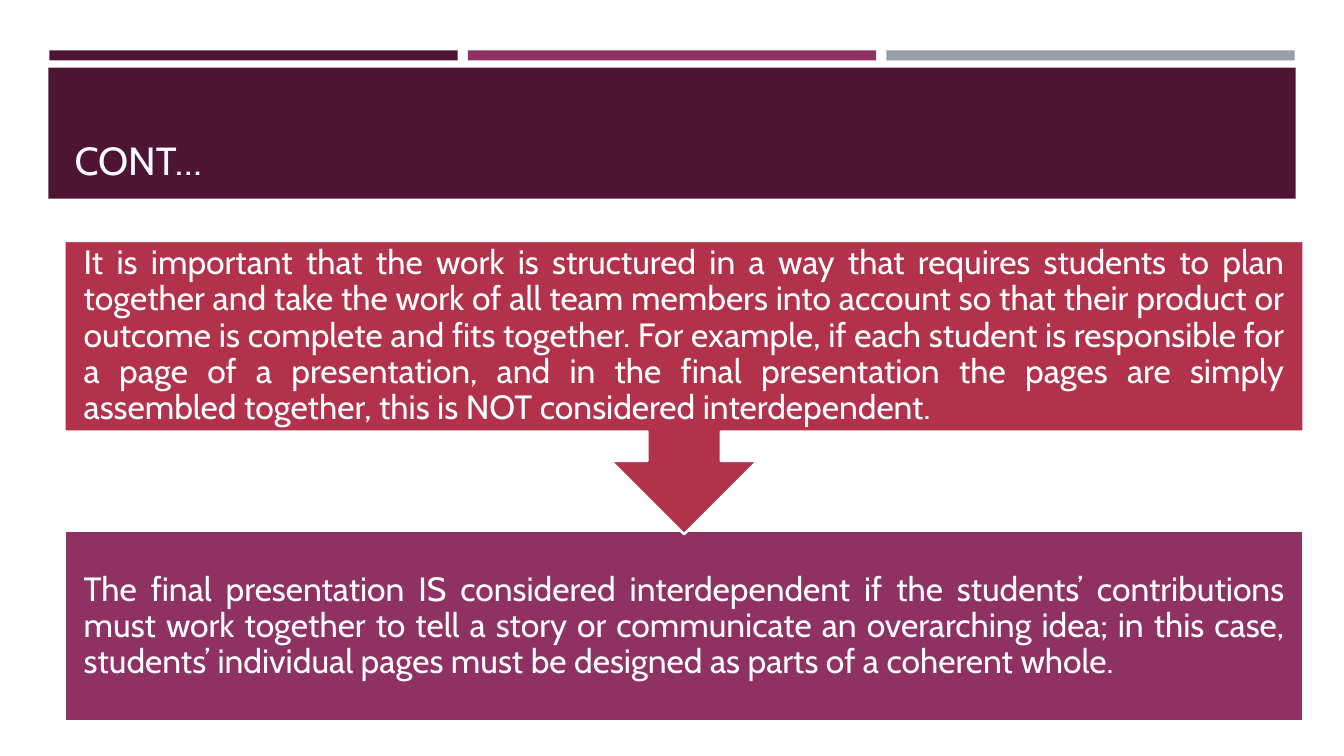
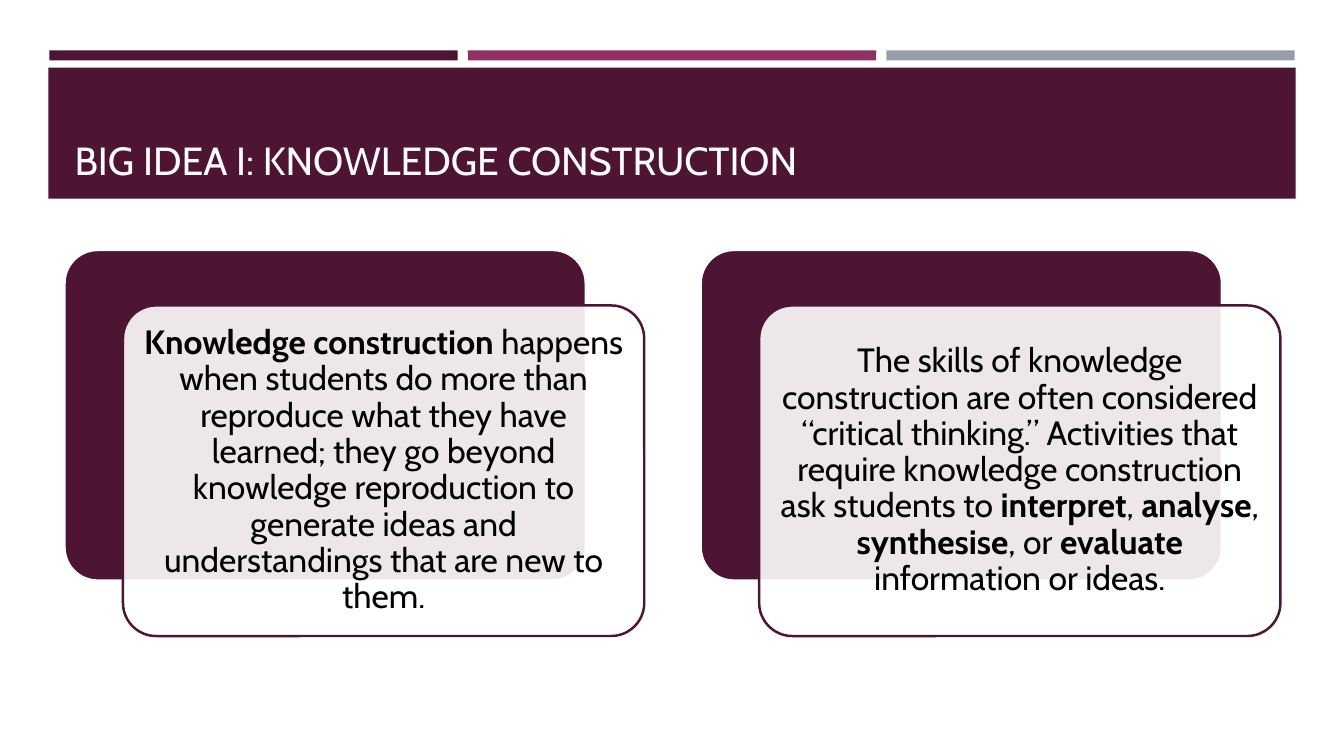
import dataclasses

import lxml.etree
import pptx
import pptx.dml.color
import pptx.enum.shapes
import pptx.enum.text
import pptx.oxml.ns
import pptx.util


@dataclasses.dataclass(frozen=True)
class Theme:
    font: str = "Cabin"
    plum: str = "4D1434"
    violet: str = "903163"
    grey: str = "969FA7"
    red: str = "B2324B"
    white: str = "FFFFFF"
    title: str = "FFFEFF"
    black: str = "000000"
    title_size: int = 28
    body_size: int = 24
    outline: float = 1.75
    line_spacing: float = 0.9


THEME = Theme()
PX = 9144
SHAPE = pptx.enum.shapes.MSO_SHAPE
ALIGN = pptx.enum.text.PP_ALIGN
ANCHOR = pptx.enum.text.MSO_ANCHOR
NO_FIT = pptx.enum.text.MSO_AUTO_SIZE.NONE
RGB = pptx.dml.color.RGBColor.from_string


def draw(page, kind, box, fill, line=None):
    shape = page.shapes.add_shape(kind, *[length * PX for length in box])
    shape.shadow.inherit = False
    shape.fill.solid()
    shape.fill.fore_color.rgb = RGB(fill)
    if line:
        shape.line.color.rgb = RGB(line)
        shape.line.width = pptx.util.Pt(THEME.outline)
    else:
        shape.line.fill.background()
    return shape


def write(shape, spans, align, color, size, frame_format):
    frame = shape.text_frame
    for name, value in frame_format.items():
        setattr(frame, name, value)
    para = frame.paragraphs[0]
    para.alignment = align
    para.line_spacing = THEME.line_spacing
    for text, bold in spans:
        span = para.add_run()
        span.text = text
        for name, value in {"name": THEME.font, "size": pptx.util.Pt(size), "bold": bold}.items():
            setattr(span.font, name, value)
        span.font.color.rgb = RGB(color)


deck = pptx.Presentation()
deck.slide_width = 1333 * PX
deck.slide_height = 750 * PX
layout = deck.slide_layouts[5]
title_holder, *spare_holders = layout.placeholders
for holder in spare_holders:
    holder.element.getparent().remove(holder.element)
for name, length in {"left": 64, "top": 77, "width": 1206, "height": 111}.items():
    setattr(title_holder, name, length * PX)
title_format = {"vertical_anchor": ANCHOR.BOTTOM, "word_wrap": True, "auto_size": NO_FIT}

titles = ["CONT…", "BIG IDEA I: KNOWLEDGE CONSTRUCTION"]
pages = [deck.slides.add_slide(layout) for title in titles]
for page, title in zip(pages, titles):
    write(page.shapes.title, [(title, False)], ALIGN.LEFT, THEME.title, THEME.title_size, title_format)
flow_page, cards_page = pages

bands = [((49 + 415 * column, 50, 405, 10), color)
         for column, color in enumerate([THEME.plum, THEME.violet, THEME.grey])]
bands.append(((48, 67, 1237, 130), THEME.plum))
for index, (box, color) in enumerate(bands):
    band = draw(flow_page, SHAPE.RECTANGLE, box, color).element
    band.nvSpPr.cNvPr.set("id", str(100 + index))
    layout.shapes.element.insert(2 + index, band)

body_format = {"vertical_anchor": ANCHOR.MIDDLE, "word_wrap": True, "auto_size": NO_FIT}
sides = ["margin_left", "margin_top", "margin_right", "margin_bottom"]
flow_format = body_format | dict.fromkeys(sides, 19 * PX)
card_format = body_format | dict.fromkeys(sides, 10 * PX)

result = draw(flow_page, SHAPE.RECTANGLE, (64, 527, 1229, 189), THEME.violet, THEME.white)
callout = draw(flow_page, SHAPE.UP_ARROW_CALLOUT, (64, 239, 1229, 291), THEME.red, THEME.white)
callout.rotation = 180
premise = flow_page.shapes.add_textbox(64 * PX, 239 * PX, 1229 * PX, 189 * PX)
for shape, text in [
    (premise, "It is important that the work is structured in a way that requires students to plan "
              "together and take the work of all team members into account so that their product or "
              "outcome is complete and fits together. For example, if each student is responsible "
              "for a page of a presentation, and in the final presentation the pages are simply "
              "assembled together, this is NOT considered interdependent."),
    (result, "The final presentation IS considered interdependent if the students’ contributions "
             "must work together to tell a story or communicate an overarching idea; in this case, "
             "students’ individual pages must be designed as parts of a coherent whole."),
]:
    write(shape, [(text, False)], ALIGN.JUSTIFY, THEME.white, THEME.body_size, flow_format)

cards = [
    [("Knowledge construction ", True),
     ("happens when students do more than reproduce what they have learned; they go beyond "
      "knowledge reproduction to generate ideas and understandings that are new to them.", False)],
    [("The skills of knowledge construction are often considered “critical thinking.” Activities "
      "that require knowledge construction ask students to ", False),
     ("interpret", True), (", ", False), ("analyse", True), (", ", False),
     ("synthesise", True), (", or ", False), ("evaluate", True),
     (" information or ideas.", False)],
]
for column, spans in enumerate(cards):
    left = 64 + 631 * column
    back = draw(cards_page, SHAPE.ROUNDED_RECTANGLE, (left, 248, 517, 328), THEME.plum, THEME.white)
    front = draw(cards_page, SHAPE.ROUNDED_RECTANGLE, (left + 58, 303, 517, 328), THEME.white, THEME.plum)
    for card in (back, front):
        card.adjustments[0] = 0.1
    tint = front.element.spPr.find(pptx.oxml.ns.qn("a:solidFill"))[0]
    lxml.etree.SubElement(tint, pptx.oxml.ns.qn("a:alpha"), val="90000")
    write(front, spans, ALIGN.CENTER, THEME.black, THEME.body_size, card_format)

deck.save("out.pptx")
